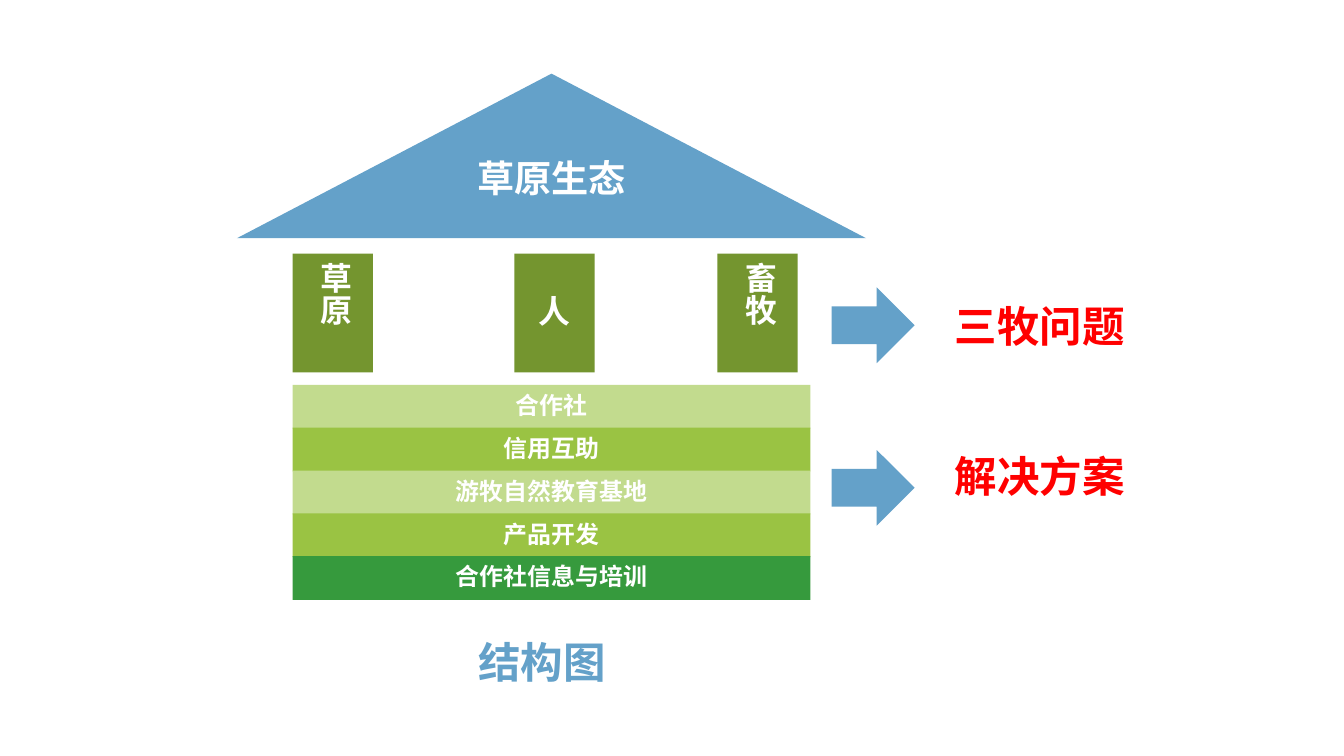
from pptx import Presentation
from pptx.dml.color import RGBColor
from pptx.enum.shapes import MSO_SHAPE
from pptx.enum.text import MSO_ANCHOR, MSO_AUTO_SIZE, PP_ALIGN
from pptx.oxml.ns import qn
from pptx.util import Pt
from lxml.etree import SubElement

COLORS = {
    "blue": "64A1C9",
    "olive": "74952F",
    "pale": "C2DB8E",
    "lime": "9AC343",
    "green": "369A3D",
    "white": "FFFFFF",
    "red": "FF0000",
}
FONT = "Noto Sans CJK SC"
HOUSE_LEFT = 220.5
PILLARS = [("草原", 220.5), ("人", 387.5), ("畜牧", 540.5)]
BANDS = [
    ("合作社", "pale"),
    ("信用互助", "lime"),
    ("游牧自然教育基地", "pale"),
    ("产品开发", "lime"),
    ("合作社信息与培训", "green"),
]
BAND_TOP, BAND_STEP, BAND_HEIGHT = 290, 32.25, 33
CONCLUSIONS = [("三牧问题", 216.5, 225.5), ("解决方案", 339, 339)]


def set_values(target, values):
    for name, value in values.items():
        setattr(target, name, value)


def write_text(shape, text, size, color, anchor=MSO_ANCHOR.MIDDLE, line_spacing=1.0):
    frame = shape.text_frame
    set_values(frame, {
        "word_wrap": True,
        "auto_size": MSO_AUTO_SIZE.NONE,
        "vertical_anchor": anchor,
        "margin_left": 0,
        "margin_right": 0,
        "margin_top": Pt(3.6),
        "margin_bottom": Pt(3.6),
    })
    paragraph = frame.paragraphs[0]
    set_values(paragraph, {
        "alignment": PP_ALIGN.CENTER,
        "line_spacing": line_spacing,
        "space_before": Pt(0),
    })
    run = paragraph.add_run()
    run.text = text
    set_values(run.font, {"name": FONT, "size": Pt(size), "bold": True})
    run.font.color.rgb = RGBColor.from_string(COLORS[color])
    SubElement(run.font._element, qn("a:ea"), typeface=FONT)


def add_block(slide, kind, box, color):
    shape = slide.shapes.add_shape(kind, *map(Pt, box))
    shape.shadow.inherit = False
    shape.fill.solid()
    shape.fill.fore_color.rgb = RGBColor.from_string(COLORS[color])
    shape.line.fill.background()
    return shape


def add_title(slide, text, box):
    title = slide.shapes.title
    set_values(title, dict(zip(("left", "top", "width", "height"), map(Pt, box))))
    write_text(title, text, 32, "blue")


def add_roof(slide, text):
    roof = add_block(slide, MSO_SHAPE.ISOSCELES_TRIANGLE, (178.5, 55.5, 474, 124), "blue")
    write_text(roof, text, 28, "white", MSO_ANCHOR.TOP, 0.9)


def add_pillar(slide, text, left):
    pillar = add_block(slide, MSO_SHAPE.RECTANGLE, (left, 191, 60.5, 89.5), "olive")
    write_text(pillar, text, 24, "white", line_spacing=0.9)
    if len(text) > 1:
        pillar.text_frame._txBody.bodyPr.set("vert", "eaVert")


def add_band(slide, row, text, color):
    top = BAND_TOP + row * BAND_STEP
    band = add_block(slide, MSO_SHAPE.RECTANGLE, (HOUSE_LEFT, top, 390, BAND_HEIGHT), color)
    write_text(band, text, 18, "white", line_spacing=0.9)


def add_conclusion(slide, text, arrow_top, label_top):
    add_block(slide, MSO_SHAPE.RIGHT_ARROW, (626.5, arrow_top, 62.5, 57), "blue")
    label = slide.shapes.add_textbox(Pt(704), Pt(label_top), Pt(159), Pt(39))
    write_text(label, text, 32, "red")


def main():
    """Build the house-shaped structure diagram and save it."""
    presentation = Presentation()
    set_values(presentation, {"slide_width": Pt(1012.5), "slide_height": Pt(569.5)})
    slide = presentation.slides.add_slide(presentation.slide_layouts[5])
    add_title(slide, "结构图", (329, 479, 159, 39))
    add_roof(slide, "草原生态")
    for text, left in PILLARS:
        add_pillar(slide, text, left)
    for row, (text, color) in enumerate(BANDS):
        add_band(slide, row, text, color)
    for text, arrow_top, label_top in CONCLUSIONS:
        add_conclusion(slide, text, arrow_top, label_top)
    presentation.save("out.pptx")


if __name__ == "__main__":
    main()
